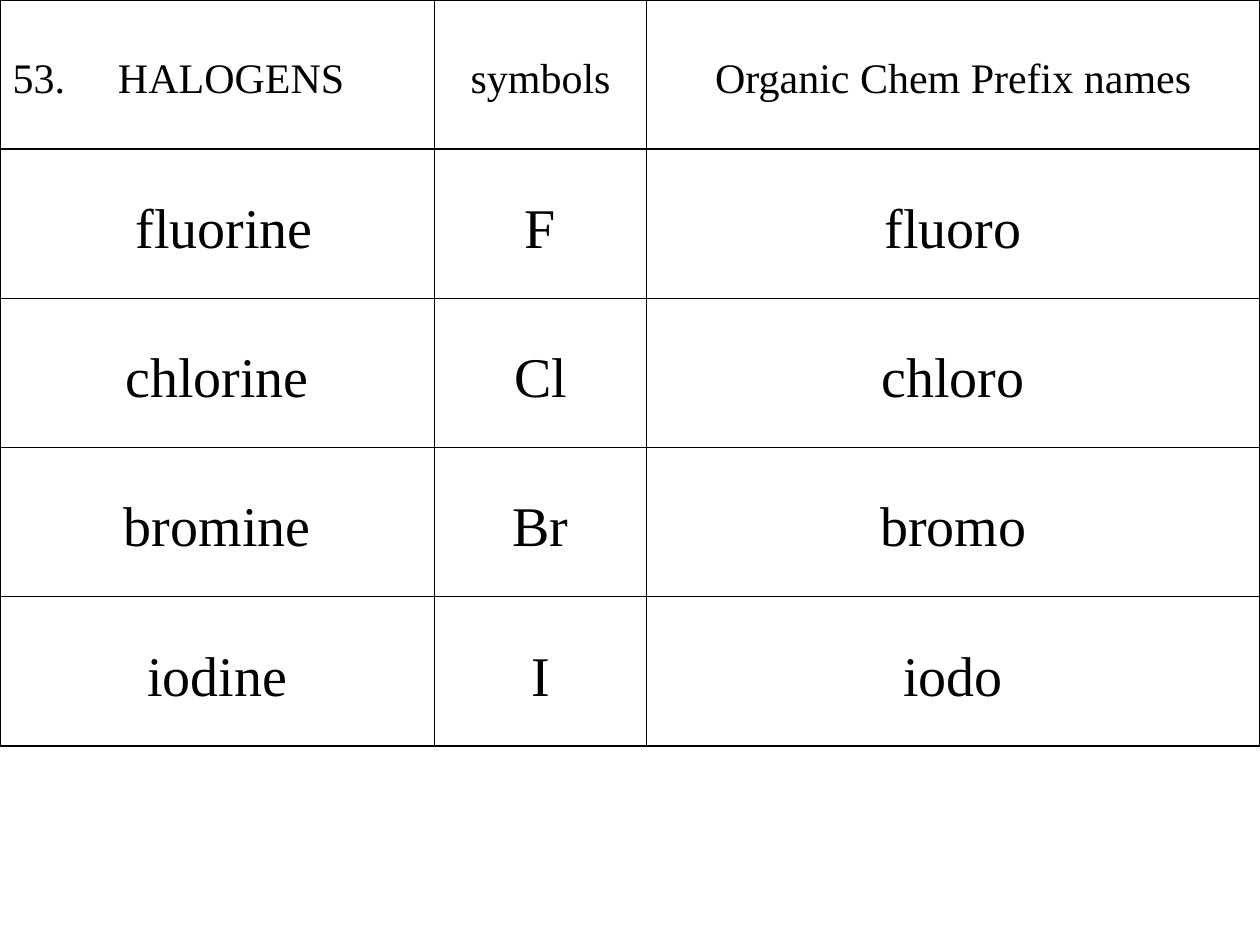
from pptx import Presentation
from pptx.dml.color import RGBColor
from pptx.enum.text import MSO_VERTICAL_ANCHOR as Anchor, PP_PARAGRAPH_ALIGNMENT as Align
from pptx.oxml.xmlchemy import OxmlElement as Element
from pptx.util import Pt

BLACK = RGBColor(0, 0, 0)
COLUMN_WIDTHS = (248.4, 121, 350.6)
ROW_HEIGHT = 85.25
HALOGENS = [
    ("53.\tHALOGENS", "symbols", "Organic Chem Prefix names"),
    (" fluorine", "F", "fluoro"),
    ("chlorine", "Cl", "chloro"),
    ("bromine", "Br", "bromo"),
    ("iodine", "I", "iodo"),
]


class SlideBuilder:
    """Hold the text style and build the elements of one slide."""

    font_name = "Times New Roman"
    header_size = 24
    body_size = 32
    line_spacing = 1.19
    border_width = 1
    title_tab = 60.2

    def __init__(self, slide):
        self.slide = slide

    def add_table(self, left, top, widths, row_height, rows):
        shape = self.slide.shapes.add_table(
            len(rows), len(widths), Pt(left), Pt(top),
            Pt(sum(widths)), Pt(row_height * len(rows)))
        table = shape.table
        table.first_row = False
        table.horz_banding = False
        for column, width in zip(table.columns, widths):
            column.width = Pt(width)
        for row_index, texts in enumerate(rows):
            table.rows[row_index].height = Pt(row_height)
            size = self.body_size if row_index else self.header_size
            for column_index, text in enumerate(texts):
                self.fill_cell(table.cell(row_index, column_index), text, size)

    def fill_cell(self, cell, text, size):
        cell.vertical_anchor = Anchor.MIDDLE
        self.add_borders(cell)
        cell.fill.background()
        cell.text_frame.text = text
        paragraph = cell.text_frame.paragraphs[0]
        paragraph.line_spacing = self.line_spacing
        if "\t" in text:
            paragraph.alignment = Align.LEFT
            self.add_tab_stop(paragraph, self.title_tab)
        else:
            paragraph.alignment = Align.CENTER
        for run in paragraph.runs:
            run.font.name = self.font_name
            run.font.size = Pt(size)
            run.font.color.rgb = BLACK

    def add_tab_stop(self, paragraph, position):
        tab_list = Element("a:tabLst")
        tab = Element("a:tab")
        tab.set("pos", str(Pt(position)))
        tab.set("algn", "l")
        tab_list.append(tab)
        paragraph._p.get_or_add_pPr().append(tab_list)

    def add_borders(self, cell):
        properties = cell._tc.get_or_add_tcPr()
        for side in ("L", "R", "T", "B"):
            line = Element(f"a:ln{side}")
            line.set("w", str(Pt(self.border_width)))
            fill = Element("a:solidFill")
            color = Element("a:srgbClr")
            color.set("val", str(BLACK))
            fill.append(color)
            line.append(fill)
            properties.append(line)


def main():
    presentation = Presentation()
    presentation.slide_width = Pt(720)
    presentation.slide_height = Pt(540)
    slide = presentation.slides.add_slide(presentation.slide_layouts[6])
    builder = SlideBuilder(slide)
    builder.add_table(0, 0, COLUMN_WIDTHS, ROW_HEIGHT, HALOGENS)
    presentation.save("out.pptx")


if __name__ == "__main__":
    main()
